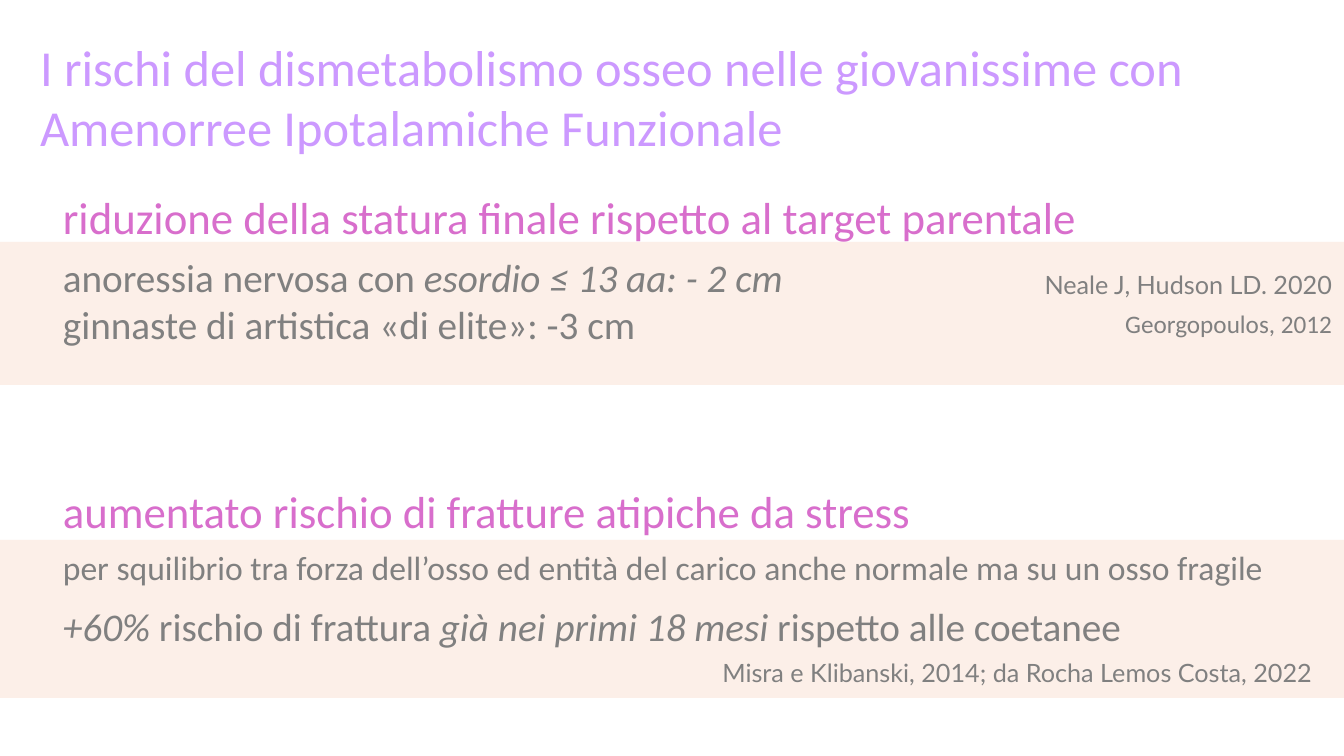
from lxml.etree import SubElement
from pptx import Presentation
from pptx.dml.color import RGBColor
from pptx.enum.shapes import MSO_SHAPE
from pptx.enum.text import MSO_ANCHOR, MSO_AUTO_SIZE, PP_ALIGN
from pptx.oxml.ns import qn
from pptx.util import Emu, Pt

LILAC = RGBColor(0xCC, 0x99, 0xFF)
ORCHID = RGBColor(0xD8, 0x6E, 0xCC)
GREY = RGBColor(0x80, 0x80, 0x80)
PEACH = RGBColor(0xFB, 0xE3, 0xD6)

SLIDE_WIDTH, SLIDE_HEIGHT = 1344, 756
TITLE_ONLY = 5
LEFT = 53


def px(length):
    return Emu(round(length * 914400 / 100.8))


def write(para, *spans, size=28, font="Calibri", color=GREY,
          align=PP_ALIGN.LEFT, before=0):
    """Fill a paragraph; each span is text or a pair of text and italic."""
    para.alignment = align
    para.space_before = Pt(before)
    for item in spans:
        text, italic = (item, False) if isinstance(item, str) else item
        span = para.add_run()
        span.text = text
        span.font.size = Pt(size)
        span.font.name = font
        span.font.italic = italic
        span.font.color.rgb = color


class RiskSlide:
    def __init__(self, deck):
        self.slide = deck.slides.add_slide(deck.slide_layouts[TITLE_ONLY])

    def title(self, text, left, top, width, height):
        box = self.slide.shapes.title
        box.left, box.top = px(left), px(top)
        box.width, box.height = px(width), px(height)
        frame = box.text_frame
        frame.word_wrap = True
        frame.auto_size = MSO_AUTO_SIZE.NONE
        frame.vertical_anchor = MSO_ANCHOR.TOP
        write(frame.paragraphs[0], text, size=36, color=LILAC)

    def band(self, top, height, opacity=55):
        band = self.slide.shapes.add_shape(
            MSO_SHAPE.RECTANGLE, 0, px(top), px(SLIDE_WIDTH), px(height))
        band.shadow.inherit = False
        band.line.fill.background()
        band.fill.solid()
        band.fill.fore_color.rgb = PEACH
        color = band.fill._xPr.find(qn("a:solidFill"))[0]
        SubElement(color, qn("a:alpha"), val=str(opacity * 1000))

    def text(self, left, top, width, height):
        """Add a text box and return its frame."""
        box = self.slide.shapes.add_textbox(
            px(left), px(top), px(width), px(height))
        frame = box.text_frame
        frame.word_wrap = True
        frame.auto_size = MSO_AUTO_SIZE.SHAPE_TO_FIT_TEXT
        return frame

    def line(self, left, top, width, height, *spans, **style):
        frame = self.text(left, top, width, height)
        write(frame.paragraphs[0], *spans, **style)
        return frame

    def citation(self, text, left, top, width, height, font="Lato"):
        self.line(left, top, width, height, text,
                  size=18, font=font, align=PP_ALIGN.RIGHT)


def main():
    deck = Presentation()
    deck.slide_width, deck.slide_height = px(SLIDE_WIDTH), px(SLIDE_HEIGHT)
    page = RiskSlide(deck)

    # Title and background bands
    page.title("I rischi del dismetabolismo osseo nelle giovanissime con "
               "Amenorree Ipotalamiche Funzionale", 30, 31, 1259, 132)
    page.band(242, 143)
    page.band(540, 158)

    # Reduced final height
    height_risk = page.line(
        LEFT, 185, 1235, 169,
        "riduzione della statura finale rispetto al target parentale",
        size=32, color=ORCHID)
    write(height_risk.add_paragraph(), "anoressia nervosa con ",
          ("esordio ≤ 13 aa: - 2 cm", True), before=7)
    write(height_risk.add_paragraph(),
          "ginnaste di artistica «di elite»: -3 cm")
    page.citation("Neale J, Hudson LD. 2020", 670, 264, 672, 90)
    page.citation("Georgopoulos, 2012", 645, 303, 697, 40, font="Calibri")

    # Stress fractures
    page.line(LEFT, 479, 912, 64,
              "aumentato rischio di fratture atipiche da stress",
              size=32, color=ORCHID)
    page.line(LEFT, 542, 1232, 50,
              "per squilibrio tra forza dell’osso ed entità del carico "
              "anche normale ma su un osso fragile", size=24)
    page.line(LEFT, 597, 1161, 57,
              ("+60% ", True), "rischio di frattura ",
              ("già nei primi 18 mesi ", True), "rispetto alle coetanee")
    page.citation("Misra e Klibanski, 2014; da Rocha Lemos Costa, 2022",
                  562, 652, 760, 72)

    deck.save("out.pptx")


if __name__ == "__main__":
    main()
